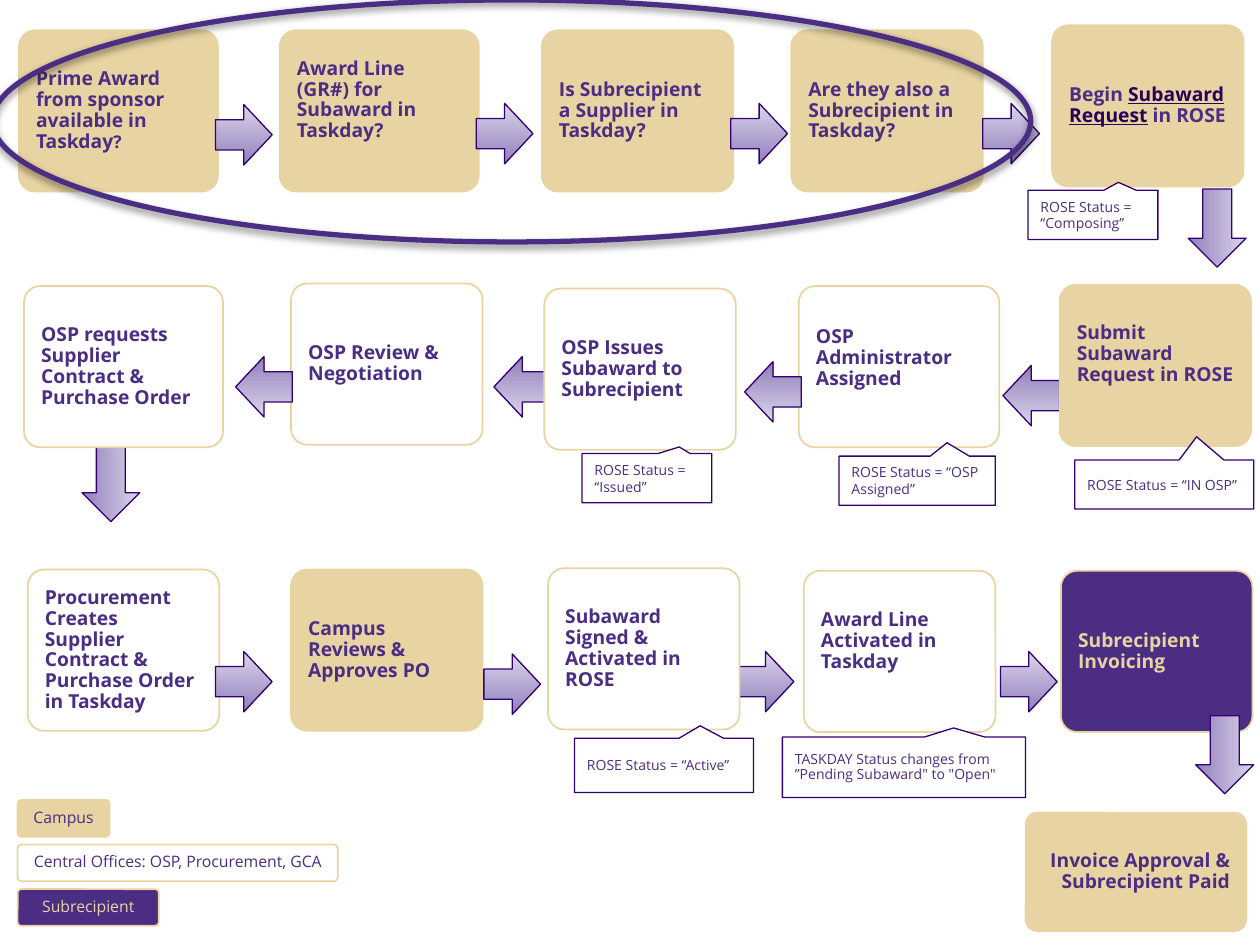
from collections import namedtuple

from lxml import etree
from pptx import Presentation
from pptx.dml.color import RGBColor
from pptx.enum.shapes import MSO_SHAPE
from pptx.enum.text import MSO_ANCHOR, PP_ALIGN
from pptx.oxml.ns import qn
from pptx.util import Inches, Pt

ROUNDED, ARROW = MSO_SHAPE.ROUNDED_RECTANGLE, MSO_SHAPE.RIGHT_ARROW
CALLOUT, ELLIPSE = MSO_SHAPE.ROUNDED_RECTANGULAR_CALLOUT, MSO_SHAPE.OVAL
MIDDLE = MSO_ANCHOR.MIDDLE
LEFT, CENTER, RIGHT = PP_ALIGN.LEFT, PP_ALIGN.CENTER, PP_ALIGN.RIGHT

PURPLE = RGBColor(0x4B, 0x2E, 0x83)
INK = RGBColor(0x33, 0x00, 0x6F)
LINK = RGBColor(0x26, 0x00, 0x5C)
GOLD = RGBColor(0xE8, 0xD3, 0xA2)
WHITE = RGBColor(0xFF, 0xFF, 0xFF)
LILAC = RGBColor(0xDB, 0xD4, 0xEB)
VIOLET = RGBColor(0x91, 0x80, 0xBB)

FONT = "Open Sans"
PITCH = 2.05            # distance between columns
STEP_HEIGHT = 1.28
PAD = 0.1

Box = namedtuple("Box", "left top width height")
# nudge: offset from the column's corner; lift: extra room below the text
Step = namedtuple("Step", "text fill nudge width lift note", defaults=(1.52, 0, None))
# offset: from the step's corner; tip: callout point as shares of its size
Note = namedtuple("Note", "text offset size tip spacing", defaults=(1.0,))
# offset: from the row's corner; behind: drawn under the steps
Arrow = namedtuple("Arrow", "offset turn behind", defaults=(0, False))

CAMPUS = {"fill": GOLD, "color": PURPLE}
CENTRAL = {"fill": WHITE, "color": PURPLE}
SUBRECIPIENT = {"fill": PURPLE, "color": GOLD}

ROWS = [
    (Box(0.15, 0.24, 9.72, STEP_HEIGHT), [
        Step([("Prime Award from sponsor available in Taskday", {}),
              ("?", {"size": Pt(10)})], CAMPUS, (0, 0), 1.58),
        Step("Award Line (GR#) for Subaward in Taskday?", CAMPUS, (0.02, 0), 1.58, 0.17),
        Step("Is Subrecipient a Supplier in Taskday?", CAMPUS, (0.05, 0)),
        Step("Are they also a Subrecipient in Taskday?", CAMPUS, (-0.02, 0)),
        Step([("Begin ", {}), ("Subaward Request", {"underline": True, "color": LINK}),
              (" in ROSE", {})], CAMPUS, (0, -0.04),
             note=Note("ROSE Status = “Composing”", (-0.19, 1.31), (1.03, 0.39),
                       (0.196, -0.661))),
    ], [Arrow((1.56, 0.59)), Arrow((3.63, 0.58)), Arrow((5.65, 0.58)),
        Arrow((7.65, 0.58)), Arrow((9.2, 1.34), 90)]),
    (Box(0.2, 2.27, 9.73, STEP_HEIGHT), [
        Step("OSP requests Supplier Contract & Purchase Order", CENTRAL, (-0.01, 0), 1.58),
        Step("OSP Review & Negotiation", CENTRAL, (0.06, -0.02)),
        Step("OSP Issues Subaward to Subrecipient", CENTRAL, (0.02, 0.02),
             note=Note("ROSE Status = “Issued”", (0.3, 1.31), (1.03, 0.39),
                       (0.249, -0.636))),
        Step("OSP Administrator Assigned", CENTRAL, (-0.01, 0), 1.59, 0.13,
             Note("ROSE Status = “OSP Assigned”", (0.32, 1.35), (1.24, 0.39),
                  (0.191, -0.773))),
        Step("Submit Subaward Request in ROSE", CAMPUS, (0.01, -0.01), lift=0.18,
             note=Note("ROSE Status = “IN OSP”", (0.12, 1.39), (1.42, 0.39),
                       (0.181, -0.971))),
    ], [Arrow((1.67, 0.56), 180), Arrow((3.72, 0.56), 180, True),
        Arrow((5.71, 0.6), 180), Arrow((7.76, 0.63), 180, True),
        Arrow((0.37, 1.33), 90, True)]),
    (Box(0.22, 4.52, 9.72, STEP_HEIGHT), [
        Step("Procurement Creates Supplier Contract & Purchase Order in Taskday",
             CENTRAL, (0, 0)),
        Step("Campus Reviews & Approves PO", CAMPUS, (0.04, 0)),
        Step("Subaward Signed & Activated in ROSE", CENTRAL, (0.03, -0.01),
             note=Note("ROSE Status = “Active”", (0.21, 1.35), (1.42, 0.43),
                       (0.202, -0.731))),
        Step("Award Line Activated in Taskday", CENTRAL, (0.01, 0.01), lift=0.16,
             note=Note("TASKDAY Status changes from ”Pending Subaward\" to \"Open\"",
                       (-0.17, 1.32), (1.93, 0.48), (0.204, -0.652), 0.9)),
        Step("Subrecipient Invoicing", SUBRECIPIENT, (0, 0.01)),
    ], [Arrow((1.49, 0.65)), Arrow((3.62, 0.67)), Arrow((5.63, 0.65), 0, True),
        Arrow((7.72, 0.65)), Arrow((9.19, 1.24), 90)]),
]

LEGEND = [("Campus", 0.73, CAMPUS),
          ("Central Offices: OSP, Procurement, GCA", 2.54, CENTRAL),
          ("Subrecipient", 1.12, SUBRECIPIENT)]


def add_outlined(page, kind, box, line, weight, adjustments=()):
    shape = page.shapes.add_shape(kind, *map(Inches, box))
    shape.shadow.inherit = False
    shape.line.color.rgb = line
    shape.line.width = Pt(weight)
    for index, value in enumerate(adjustments):
        shape.adjustments[index] = value
    return shape


def write(shape, text, align=LEFT, spacing=0.9, lift=0, **font):
    """Fill the shape with one paragraph: a string or (text, format) spans."""
    frame = shape.text_frame
    layout = {"word_wrap": True, "vertical_anchor": MIDDLE,
              "margin_left": Inches(PAD), "margin_right": Inches(PAD),
              "margin_top": Inches(PAD), "margin_bottom": Inches(PAD + lift)}
    for name, value in layout.items():
        setattr(frame, name, value)
    para = frame.paragraphs[0]
    para.alignment, para.line_spacing = align, spacing
    for words, changes in [(text, {})] if isinstance(text, str) else text:
        span = para.add_run()
        span.text = words
        values = {"name": FONT, **font, **changes}
        span.font.color.rgb = values.pop("color")
        for name, value in values.items():
            setattr(span.font, name, value)


def add_card(page, box, text, style, size=11, bold=True, **layout):
    card = add_outlined(page, ROUNDED, box, GOLD, 1, [0.1])
    card.fill.solid()
    card.fill.fore_color.rgb = style["fill"]
    write(card, text, color=style["color"], size=Pt(size), bold=bold, **layout)


def add_note(page, box, note):
    callout = add_outlined(page, CALLOUT, box, INK, 0.75, [*note.tip, 0])
    callout.fill.solid()
    callout.fill.fore_color.rgb = WHITE
    write(callout, note.text, spacing=note.spacing, color=PURPLE, size=Pt(8))


def add_arrow(page, row, arrow):
    size = (0.62, 0.46) if arrow.turn == 90 else (0.45, 0.48)
    box = Box(row.left + arrow.offset[0], row.top + arrow.offset[1], *size)
    shape = add_outlined(page, ARROW, box, INK, 0.75, [0.5, 0.5])
    shape.rotation = arrow.turn
    shape.fill.gradient()
    shape.fill.gradient_angle = 270
    for stop, color in zip(shape.fill.gradient_stops, (LILAC, VIOLET)):
        stop.color.rgb = color


def add_row(page, row, steps, arrows):
    for arrow in arrows:
        if arrow.behind:
            add_arrow(page, row, arrow)
    notes = []
    for column, step in enumerate(steps):
        box = Box(row.left + column * PITCH + step.nudge[0], row.top + step.nudge[1],
                  step.width, row.height)
        add_card(page, box, step.text, step.fill, lift=step.lift)
        if step.note:
            dx, dy = step.note.offset
            notes.append((Box(box.left + dx, box.top + dy, *step.note.size), step.note))
    for box, note in notes:
        add_note(page, box, note)
    for arrow in arrows:
        if not arrow.behind:
            add_arrow(page, row, arrow)


def add_legend(page, box):
    pitch = box.height / len(LEGEND)
    for index, (text, width, style) in enumerate(LEGEND):
        entry = Box(box.left, box.top + index * pitch, width, 0.29)
        add_card(page, entry, text, style, size=9, bold=False, align=CENTER)


def add_ring(page, box):
    """Circle the readiness checks with a softly shadowed ellipse."""
    ring = add_outlined(page, ELLIPSE, box, PURPLE, 3)
    ring.fill.background()
    effects = ring._element.spPr.find(qn("a:effectLst"))
    shadow = etree.SubElement(effects, qn("a:outerShdw"), blurRad=str(Pt(4.5)),
                              dist=str(Pt(1.5)), dir="5400000", rotWithShape="0")
    color = etree.SubElement(shadow, qn("a:srgbClr"), val="000000")
    etree.SubElement(color, qn("a:alpha"), val="50000")


def main():
    deck = Presentation()
    deck.slide_width, deck.slide_height = Inches(10), Inches(7.5)
    page = deck.slides.add_slide(deck.slide_layouts[6])
    for row, steps, arrows in ROWS:
        add_row(page, row, steps, arrows)
    add_card(page, Box(8.14, 6.45, 1.75, 0.94), "Invoice Approval & Subrecipient Paid",
             CAMPUS, align=RIGHT)
    add_legend(page, Box(0.14, 6.35, 2.54, 1.06))
    add_ring(page, Box(-0.06, 0, 8.24, 1.92))
    deck.save("out.pptx")


if __name__ == "__main__":
    main()
